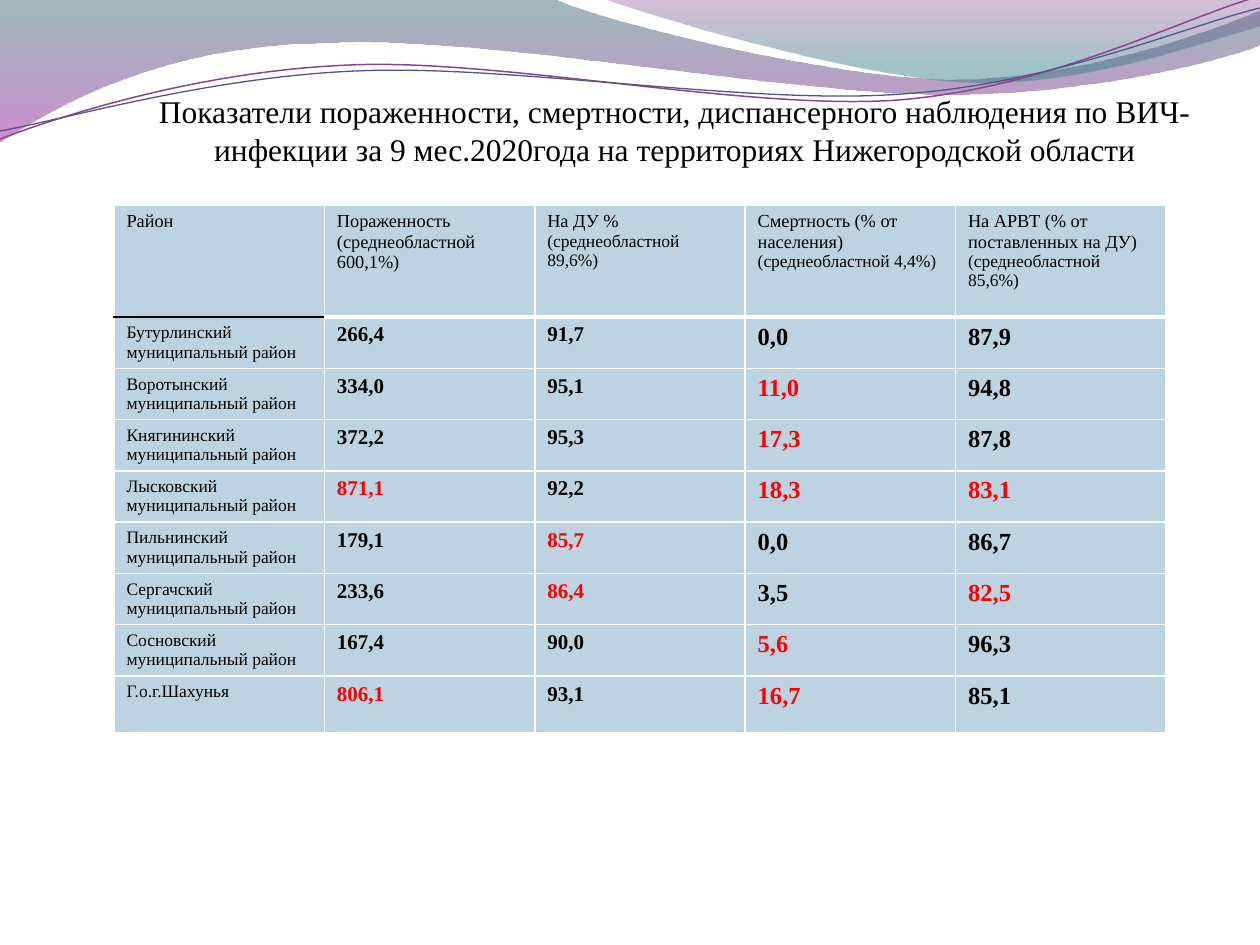
from lxml.etree import Element, SubElement
from pptx import Presentation
from pptx.dml.color import RGBColor
from pptx.enum.text import MSO_ANCHOR, PP_ALIGN
from pptx.oxml.ns import qn
from pptx.util import Pt

SCALE = 914400 / 126
FONT = "Times New Roman"
BLACK = RGBColor(0, 0, 0)
WHITE = RGBColor(255, 255, 255)
RED = RGBColor(255, 0, 0)
CELL_BLUE = RGBColor(0xBE, 0xD3, 0xE1)
TEAL_DARK = RGBColor(0x2D, 0x63, 0x68)
TEAL = RGBColor(0x2F, 0x7B, 0x82)
VIOLET = RGBColor(0xA5, 0x30, 0xA9)
PLUM = RGBColor(0x7F, 0x2F, 0x82)
LINE_PLUM = RGBColor(0x8D, 0x44, 0x90)
LINE_INDIGO = RGBColor(0x53, 0x54, 0x8A)

TITLE = ("Показатели пораженности, смертности, диспансерного наблюдения по "
         "ВИЧ-инфекции за 9 мес.2020года на территориях Нижегородской области")
HEADERS = [
    [("Район", 10.5)],
    [("Пораженность", 10.5), ("(среднеобластной 600,1%)", 10.5)],
    [("На ДУ %", 10.5), ("(среднеобластной 89,6%)", 10)],
    [("Смертность (% от населения)", 10.5), ("(среднеобластной 4,4%)", 10)],
    [("На АРВТ (% от поставленных на ДУ)", 10.5), ("(среднеобластной 85,6%)", 10)],
]
DISTRICTS = [
    ("Бутурлинский муниципальный район", "266,4", "91,7", "0,0", "87,9"),
    ("Воротынский муниципальный район", "334,0", "95,1", "11,0", "94,8"),
    ("Княгининский муниципальный район", "372,2", "95,3", "17,3", "87,8"),
    ("Лысковский муниципальный район", "871,1", "92,2", "18,3", "83,1"),
    ("Пильнинский муниципальный район", "179,1", "85,7", "0,0", "86,7"),
    ("Сергачский муниципальный район", "233,6", "86,4", "3,5", "82,5"),
    ("Сосновский муниципальный район", "167,4", "90,0", "5,6", "96,3"),
    ("Г.о.г.Шахунья", "806,1", "93,1", "16,7", "85,1"),
]
HIGHLIGHTED = {"871,1", "806,1", "85,7", "86,4", "11,0", "17,3", "18,3", "5,6",
               "16,7", "83,1", "82,5"}
VALUE_SIZES = (10, 12, 12, 14, 14)

BAND = [(0, 0), [(554, -1)],
        [(600, 21), (837, 79), (955, 79)], [(1075, 79), (1207, 33), (1260, 11)],
        [(1261, 45)], [(1239, 55), (1096, 96), (940, 94)],
        [(784, 94), (481, 35), (324, 43)], [(163, 45), (58, 105), (-1, 142)]]
CORNER = [(604, -1), [(641, 14), (859, 78), (969, 82)],
          [(1079, 87), (1211, 40), (1260, 26)], [(1260, 0)]]
PLUM_WAVE = [(0, 139), [(60, 116), (199, 71), (349, 65)],
             [(498, 58), (747, 111), (898, 100)], [(1050, 88), (1182, 18), (1257, -3)]]
INDIGO_WAVE = [(0, 131), [(59, 121), (207, 77), (357, 71)],
               [(508, 64), (752, 106), (903, 94)], [(1053, 84), (1186, 26), (1260, 8)]]


def px(n):
    """Turn pixels into EMU."""
    return round(n * SCALE)


def add_text(tf, text, size, color=BLACK, bold=False, align=PP_ALIGN.LEFT, first=True):
    """Write one formatted paragraph into a text frame."""
    p = tf.paragraphs[0] if first else tf.add_paragraph()
    p.alignment = align
    r = p.add_run()
    r.text = text
    r.font.name, r.font.size, r.font.bold = FONT, Pt(size), bold
    r.font.color.rgb = color


def add_outline(s, x, y, outline, close):
    """Draw an outline of straight and cubic segments from the given corner."""
    start, *segments = outline
    anchors = [(px(x + a), px(y + b)) for a, b in [start] + [seg[-1] for seg in segments]]
    builder = s.shapes.build_freeform(*anchors[0], scale=1.0)
    builder.add_line_segments(anchors[1:], close=close)
    sp = builder.convert_to_shape()
    sp.shadow.inherit = False
    nodes = list(sp._element.spPr.iter(qn("a:lnTo")))
    for node, (*controls, _) in zip(nodes, segments):
        if controls:
            node.tag = qn("a:cubicBezTo")
        for k, (a, b) in enumerate(controls):
            node.insert(k, Element(qn("a:pt"), x=str(px(x + a) - sp.left),
                                   y=str(px(y + b) - sp.top)))
    return sp


def add_band(s, x, y, outline, stops):
    """Draw a band with a translucent vertical gradient."""
    sp = add_outline(s, x, y, outline, True)
    sp.line.fill.background()
    sp.fill.gradient()
    sp.fill.gradient_angle = 270
    for stop, (position, color, _) in zip(sp.fill.gradient_stops, stops):
        stop.position = position
        stop.color.rgb = color
    colors = list(sp._element.spPr.iter(qn("a:srgbClr")))
    for node, (_, _, opacity) in zip(colors, stops):
        SubElement(node, qn("a:alpha"), val=str(opacity * 1000))


def add_wave(s, x, y, outline, color, width):
    """Draw a thin open curve."""
    sp = add_outline(s, x, y, outline, False)
    sp.fill.background()
    sp.line.color.rgb = color
    sp.line.width = Pt(width)


def add_decoration(s, x, y):
    """Draw the waves along the top of the slide."""
    add_band(s, x, y, BAND, [(0, TEAL_DARK, 45), (1, VIOLET, 55)])
    add_band(s, x, y, CORNER, [(0, PLUM, 30), (0.8, TEAL, 45)])
    add_wave(s, x, y, PLUM_WAVE, LINE_PLUM, 0.85)
    add_wave(s, x, y, INDIGO_WAVE, LINE_INDIGO, 0.75)


def add_title(s, x, y, w, h):
    """Place the centred slide title."""
    tf = s.shapes.add_textbox(px(x), px(y), px(w), px(h)).text_frame
    tf.word_wrap = True
    tf.vertical_anchor = MSO_ANCHOR.BOTTOM
    tf.margin_left = tf.margin_right = tf.margin_bottom = 0
    add_text(tf, TITLE, 18, align=PP_ALIGN.CENTER)


def style_cell(cell, top=(WHITE, 1), bottom=(WHITE, 1)):
    """Fill a cell and set its bottom margin and four borders."""
    cell.margin_bottom = px(2)
    tcPr = cell._tc.get_or_add_tcPr()
    sides = {"L": (WHITE, 1), "R": (WHITE, 1), "T": top, "B": bottom}
    for side, (color, width) in sides.items():
        ln = SubElement(tcPr, qn(f"a:ln{side}"), w=str(Pt(width)))
        SubElement(SubElement(ln, qn("a:solidFill")), qn("a:srgbClr"), val=str(color))
    cell.fill.solid()
    cell.fill.fore_color.rgb = CELL_BLUE


def add_district_table(s, x, y, w, header_h, row_h, last_h):
    """Place the table of indicators by district."""
    n_rows, n_cols = len(DISTRICTS) + 1, len(HEADERS)
    heights = [header_h] + [row_h] * (n_rows - 2) + [last_h]
    table = s.shapes.add_table(n_rows, n_cols, px(x), px(y), px(w), px(sum(heights))).table
    table.first_row = table.horz_banding = False
    for column in table.columns:
        column.width = px(w / n_cols)
    for row, height in zip(table.rows, heights):
        row.height = px(height)
    for j, lines in enumerate(HEADERS):
        edge = (WHITE, 3) if j else (BLACK, 1)
        style_cell(table.cell(0, j), bottom=edge)
        for k, (text, size) in enumerate(lines):
            add_text(table.cell(0, j).text_frame, text, size, first=k == 0)
        for i, district in enumerate(DISTRICTS, 1):
            cell, value = table.cell(i, j), district[j]
            style_cell(cell, top=edge if i == 1 else (WHITE, 1))
            add_text(cell.text_frame, value, VALUE_SIZES[j], bold=j > 0,
                     color=RED if value in HIGHLIGHTED else BLACK)


def main():
    """Build the slide and save it."""
    prs = Presentation()
    prs.slide_width, prs.slide_height = px(1260), px(945)
    s = prs.slides.add_slide(prs.slide_layouts[6])
    add_decoration(s, 0, 0)
    add_title(s, 108, 89, 1134, 79)
    add_district_table(s, 114, 205, 1052, 112, 51.3, 57)
    prs.save("out.pptx")


if __name__ == "__main__":
    main()
